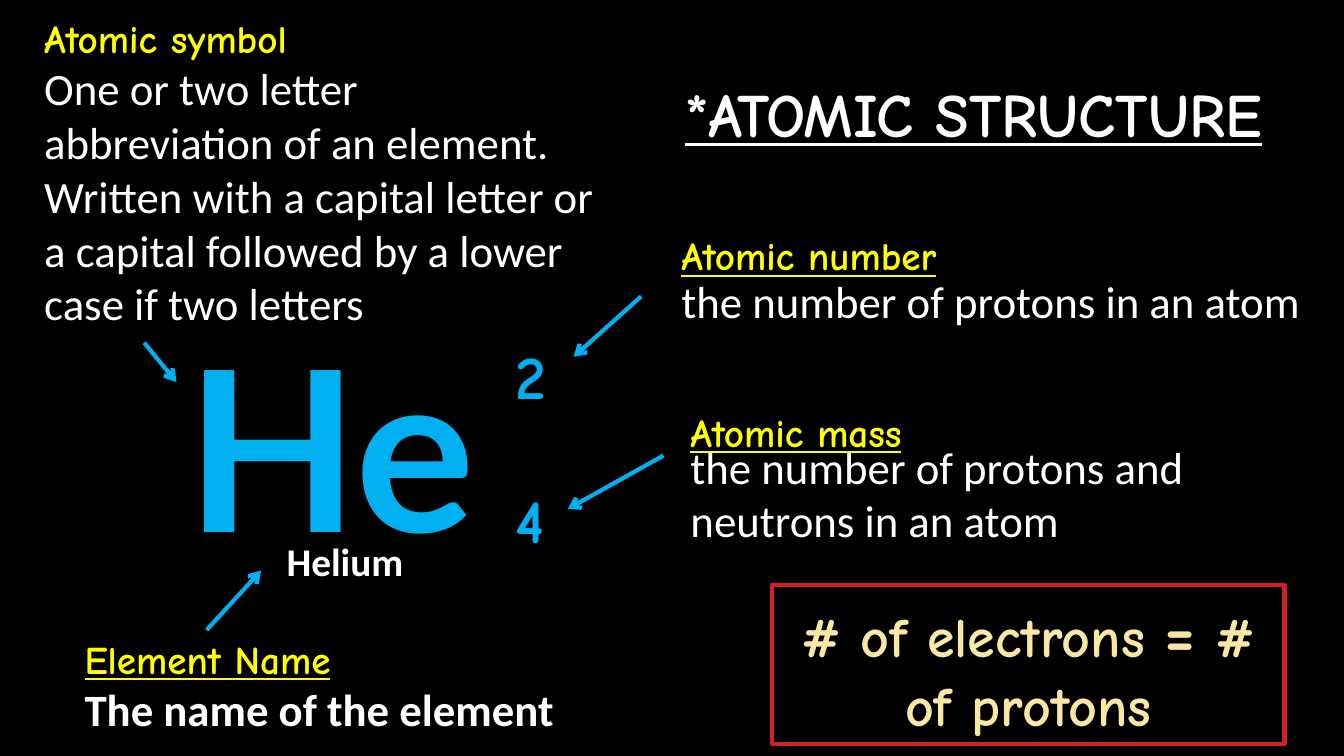
from pptx import Presentation
from pptx import util as u
from pptx.dml.color import RGBColor
from pptx.enum import shapes, text
from pptx.oxml.ns import qn
from lxml import etree

HUE = {"back": "000000", "white": "FFFFFF", "blue": "00B0F0",
       "yellow": "FFFF00", "red": "CE2424", "cream": "F8E8A4"}

# Text styles: font, size, colour, bold, underline
STYLE = {
    "title": ("Comic Neue", 44, "white", True, True),
    "term": ("Comic Neue", 28, "yellow", True, True),
    "lead": ("Comic Neue", 28, "yellow", True, False),
    "body": ("Calibri", 32, "white", False, False),
    "strong": ("Calibri", 32, "white", True, False),
    "name": ("Calibri", 28, "white", True, False),
    "symbol": ("Lato", 160, "blue", True, False),
    "digit": ("Comic Neue", 44, "blue", True, False),
    "rule": ("Comic Neue", 40, "cream", True, False),
    "equal": ("Comic Neue", 48, "cream", True, False),
}

# Text boxes: place, centred, paragraphs of (style, words)
BOXES = [
    ((4.66, 0.7, 10, 0.84), True, [("title", "*ATOMIC STRUCTURE")]),
    ((6.66, 2.67, 6.66, 0.64), False,
     [("body", "the number of protons in an atom")]),
    ((6.75, 4.5, 6.25, 1.02), False,
     [("body", "the number of protons and"), ("body", "neutrons in an atom")]),
    ((1.75, 3.01, 3.94, 2.77), False, [("symbol", "He")]),
    ((5.01, 3.3, 0.55, 0.83), False, [("digit", "2")]),
    ((5.01, 4.73, 0.55, 0.83), False, [("digit", "4")]),
    ((6.75, 4, 2.8, 0.57), False, [("term", "Atomic mass")]),
    ((6.66, 2.25, 4, 0.57), False, [("term", "Atomic number")]),
    ((0.34, 0.09, 5.66, 3.26), False,
     [("lead", "Atomic symbol"),
      ("body", "One or two letter abbreviation of an element. Written with "
               "a capital letter or a capital followed by a lower case if "
               "two letters")]),
    ((0.74, 6.25, 6.24, 1.11), False,
     [("term", "Element Name"), ("strong", "The name of the element")]),
    ((2.05, 5.28, 2.83, 0.57), True, [("name", "Helium ")]),
]

# Arrows: start and end points
ARROWS = [(1.43, 3.4, 1.75, 3.79), (6.36, 2.94, 5.69, 3.54),
          (6.58, 4.52, 5.63, 5.05), (2.05, 6.25, 2.59, 5.66)]

RULE = [("rule", "# of electrons "), ("equal", "="), ("rule", " # of protons")]
FRAME = (7.66, 5.8, 5.08, 1.58)


def color(key):
    return RGBColor.from_string(HUE[key])


def inches(place):
    return [u.Inches(n) for n in place]


def dress(run, style):
    face, size, hue, bold, under = STYLE[style]
    font = run.font
    font.name, font.size = face, u.Pt(size)
    font.bold, font.underline = bold, under
    font.color.rgb = color(hue)


def stroke(line, hue):
    line.color.rgb = color(hue)
    line.width = u.Pt(3)


deck = Presentation()
deck.slide_width, deck.slide_height = inches((13.33, 7.5))
slide = deck.slides.add_slide(deck.slide_layouts[6])
slide.background.fill.solid()
slide.background.fill.fore_color.rgb = color("back")

# Title, definitions and the element
for place, mid, lines in BOXES:
    frame = slide.shapes.add_textbox(*inches(place)).text_frame
    frame.word_wrap = True
    frame.text = "\n".join(words for style, words in lines)
    tight = all(style == "body" for style, words in lines) and len(lines) > 1
    for i, (para, (style, words)) in enumerate(zip(frame.paragraphs, lines)):
        dress(para.runs[0], style)
        if mid:
            para.alignment = text.PP_ALIGN.CENTER
        if tight:
            para.line_spacing = 0.6
            para.space_before = u.Pt(15 if i else 0)

# Arrows from each definition to its part
for ends in ARROWS:
    arrow = slide.shapes.add_connector(
        shapes.MSO_CONNECTOR.STRAIGHT, *inches(ends))
    stroke(arrow.line, "blue")
    etree.SubElement(arrow.line._get_or_add_ln(), qn("a:tailEnd"), type="arrow")
    etree.SubElement(arrow._element.spPr, qn("a:effectLst"))

# Framed rule
box = slide.shapes.add_shape(shapes.MSO_SHAPE.RECTANGLE, *inches(FRAME))
box.shadow.inherit = False
box.fill.background()
stroke(box.line, "red")
box.text_frame.word_wrap = True
box.text_frame.vertical_anchor = text.MSO_ANCHOR.MIDDLE
para = box.text_frame.paragraphs[0]
para.alignment = text.PP_ALIGN.CENTER
for style, words in RULE:
    run = para.add_run()
    run.text = words
    dress(run, style)

deck.save("out.pptx")
